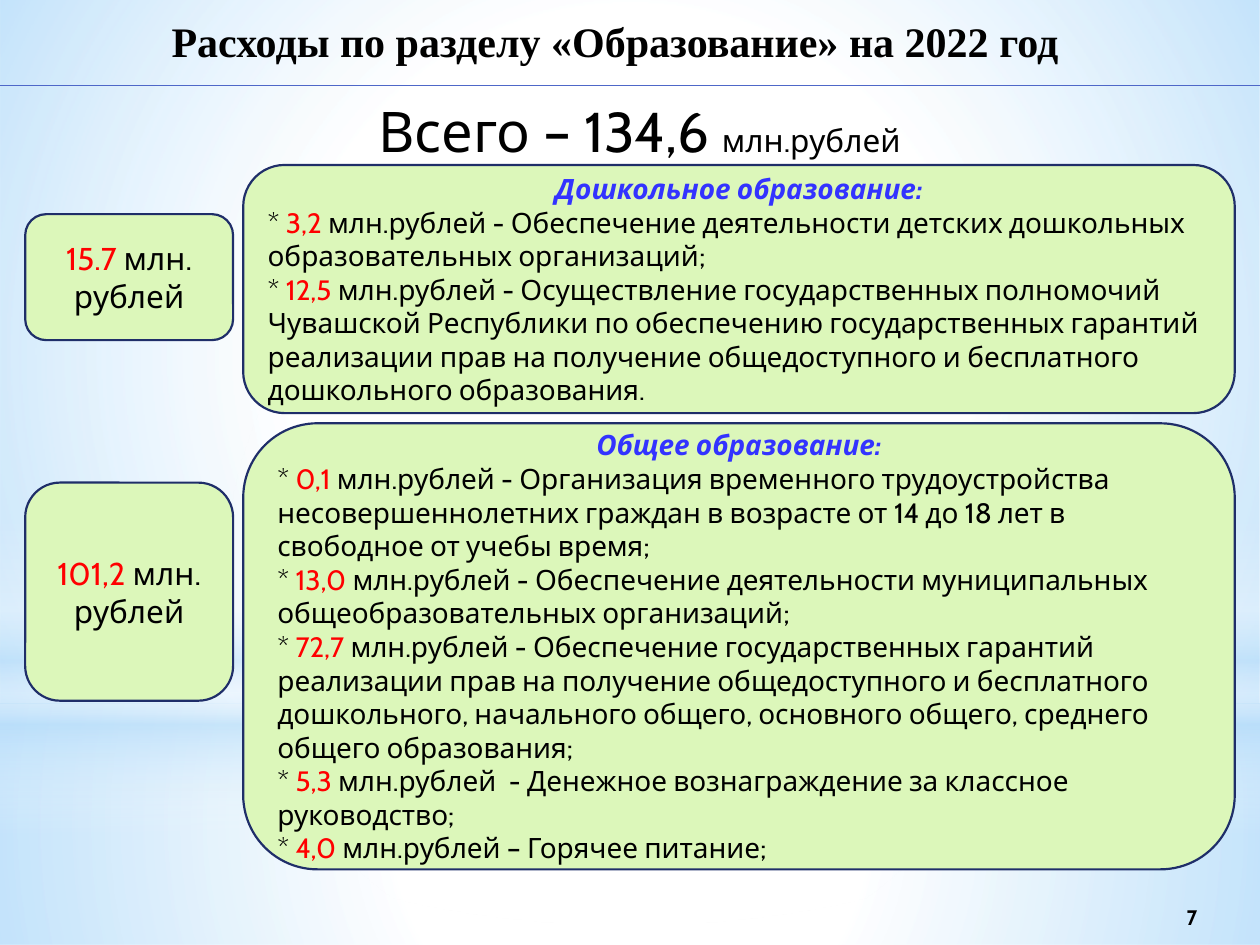
import pptx
import pptx.dml.color
import pptx.enum.shapes
import pptx.enum.text
import pptx.oxml
import pptx.oxml.ns
import pptx.util

Pt = pptx.util.Pt
SHAPE = pptx.enum.shapes.MSO_SHAPE
ALIGN = pptx.enum.text.PP_ALIGN
ANCHOR = pptx.enum.text.MSO_ANCHOR

THEME = {
    "font": "Cabin", "title_font": "Times New Roman",
    "ink": "000000", "amount": "FF0000", "heading": "3333FF",
    "card": "DCF7BA", "border": "1F2E69", "rule": "4E67C8",
    "white": "FFFFFF", "sky": "B4DCFA",
    "title_size": 24, "total_size": 32, "badge_size": 18, "card_size": 16, "page_size": 12,
}

TITLE = "Расходы по разделу «Образование» на 2022 год"
TOTAL = ("Всего – 134,6 ", "млн.рублей")
PAGE = "7"
SECTIONS = [
    {
        "heading": "Дошкольное образование:",
        "amount": "15.7 ",
        "card": (94.3, 141.8),
        "badge": (122.4, 72),
        "items": [
            ("3,2", " млн.рублей - Обеспечение деятельности детских дошкольных "
                    "образовательных организаций;"),
            ("12,5", " млн.рублей - Осуществление государственных полномочий Чувашской "
                     "Республики по обеспечению государственных гарантий реализации прав на "
                     "получение общедоступного и бесплатного дошкольного образования."),
        ],
    },
    {
        "heading": "Общее образование:",
        "amount": "101,2 ",
        "card": (241.9, 254.9),
        "badge": (275.8, 124.6),
        "items": [
            ("0,1", " млн.рублей - Организация временного трудоустройства "
                    "несовершеннолетних граждан в возрасте от 14 до 18 лет в свободное от "
                    "учебы время;"),
            ("13,0", " млн.рублей - Обеспечение деятельности муниципальных "
                     "общеобразовательных организаций;"),
            ("72,7", " млн.рублей - Обеспечение государственных гарантий реализации прав на "
                     "получение общедоступного и бесплатного дошкольного, начального общего, "
                     "основного общего, среднего общего образования;"),
            ("5,3", " млн.рублей  - Денежное вознаграждение за классное руководство;"),
            ("4,0", " млн.рублей – Горячее питание;"),
        ],
    },
]
BADGE_UNIT = "млн. рублей"
CARD_LEFT, CARD_WIDTH = 139, 566.6
BADGE_LEFT, BADGE_WIDTH = 14.4, 118.8

SLIDE_WIDTH, SLIDE_HEIGHT = 720, 540
HORIZON = 401.8
RADIAL = '<a:path path="circle"><a:fillToRect l="50000" t="50000" r="50000" b="50000"/></a:path>'
VERTICAL = '<a:lin ang="5400000" scaled="0"/>'
BACKDROP = [
    (SHAPE.RECTANGLE, HORIZON, SLIDE_HEIGHT - HORIZON, RADIAL,
     [(0, "white", 91), (37, "white", 76), (100, "sky", 79)]),
    (SHAPE.RECTANGLE, 0, HORIZON, RADIAL,
     [(0, "white", 89), (48, "white", 62), (100, "sky", 79)]),
    (SHAPE.RECTANGLE, 296.6, 180, VERTICAL,
     [(0, "white", 0), (29, "white", 30), (45, "sky", 40),
      (55, "white", 26), (65, "sky", 60), (100, "white", 0)]),
    (SHAPE.OVAL, 126, HORIZON, RADIAL, [(0, "white", 100), (56, "white", 0)]),
]


def color(name):
    return pptx.dml.color.RGBColor.from_string(THEME[name])


def add_plain_shape(slide, kind, left, top, width, height):
    shape = slide.shapes.add_shape(kind, Pt(left), Pt(top), Pt(width), Pt(height))
    shape.shadow.inherit = False
    return shape


def add_backdrop(slide):
    for kind, top, height, direction, stops in BACKDROP:
        glow = add_plain_shape(slide, kind, 0, top, SLIDE_WIDTH, height)
        glow.line.fill.background()
        stop_xml = "".join(
            f'<a:gs pos="{position * 1000}"><a:srgbClr val="{THEME[tint]}">'
            f'<a:alpha val="{opacity * 1000}"/></a:srgbClr></a:gs>'
            for position, tint, opacity in stops)
        gradient = pptx.oxml.parse_xml(
            f'<a:gradFill {pptx.oxml.ns.nsdecls("a")} rotWithShape="1">'
            f'<a:gsLst>{stop_xml}</a:gsLst>{direction}</a:gradFill>')
        glow._element.spPr.find(pptx.oxml.ns.qn("a:prstGeom")).addnext(gradient)


def write(paragraph, parts, align=ALIGN.CENTER, font="font", bold=False, italic=False):
    paragraph.alignment = align
    for text, size, tint in parts:
        run = paragraph.add_run()
        run.text = text
        run.font.name = THEME[font]
        run.font.size = Pt(THEME[size])
        run.font.color.rgb = color(tint)
        run.font.bold = bold
        run.font.italic = italic


def add_card(slide, left, top, width, height):
    card = add_plain_shape(slide, SHAPE.ROUNDED_RECTANGLE, left, top, width, height)
    card.fill.solid()
    card.fill.fore_color.rgb = color("card")
    card.line.color.rgb = color("border")
    card.line.width = Pt(1.25)
    frame = card.text_frame
    frame.word_wrap = True
    frame.vertical_anchor = ANCHOR.MIDDLE
    return frame


def add_section(slide, section):
    card = add_card(slide, CARD_LEFT, section["card"][0], CARD_WIDTH, section["card"][1])
    write(card.paragraphs[0], [(section["heading"], "card_size", "heading")],
          bold=True, italic=True)
    for amount, purpose in section["items"]:
        write(card.add_paragraph(),
              [("* ", "card_size", "ink"), (amount, "card_size", "amount"),
               (purpose, "card_size", "ink")], align=ALIGN.LEFT)
    badge = add_card(slide, BADGE_LEFT, section["badge"][0], BADGE_WIDTH, section["badge"][1])
    write(badge.paragraphs[0], [(section["amount"], "badge_size", "amount"),
                                (BADGE_UNIT, "badge_size", "ink")])


def add_label(slide, left, top, width, height, parts, bold=False):
    label = slide.shapes.add_textbox(Pt(left), Pt(top), Pt(width), Pt(height)).text_frame
    label.word_wrap = True
    label.vertical_anchor = ANCHOR.MIDDLE
    write(label.paragraphs[0], parts, bold=bold)


def add_title(slide):
    title = slide.shapes.title
    slide.shapes._spTree.append(title._element)
    title.left, title.top, title.width, title.height = Pt(20.2), Pt(2.9), Pt(662.4), Pt(43.2)
    frame = title.text_frame
    frame.auto_size = pptx.enum.text.MSO_AUTO_SIZE.NONE
    frame.vertical_anchor = ANCHOR.TOP
    frame.margin_top = Pt(6)
    write(frame.paragraphs[0], [(TITLE, "title_size", "ink")], font="title_font", bold=True)


def add_rule(slide):
    rule = slide.shapes.add_connector(
        pptx.enum.shapes.MSO_CONNECTOR.STRAIGHT, Pt(0), Pt(49), Pt(SLIDE_WIDTH), Pt(49))
    rule.line.color.rgb = color("rule")
    rule.line.width = Pt(0.75)
    rule._element.spPr.append(
        pptx.oxml.parse_xml(f'<a:effectLst {pptx.oxml.ns.nsdecls("a")}/>'))


def main():
    deck = pptx.Presentation()
    deck.slide_width, deck.slide_height = Pt(SLIDE_WIDTH), Pt(SLIDE_HEIGHT)
    slide = deck.slides.add_slide(deck.slide_layouts[5])
    slide.background.fill.solid()
    slide.background.fill.fore_color.rgb = color("white")
    add_backdrop(slide)
    add_title(slide)
    add_rule(slide)
    add_label(slide, 161.3, 54.7, 408.2, 39.6,
              [(TOTAL[0], "total_size", "ink"), (TOTAL[1], "badge_size", "ink")])
    for section in SECTIONS:
        add_section(slide, section)
    add_label(slide, 641.5, 509.8, 79.2, 28.8, [(PAGE, "page_size", "ink")], bold=True)
    deck.save("out.pptx")


if __name__ == "__main__":
    main()
